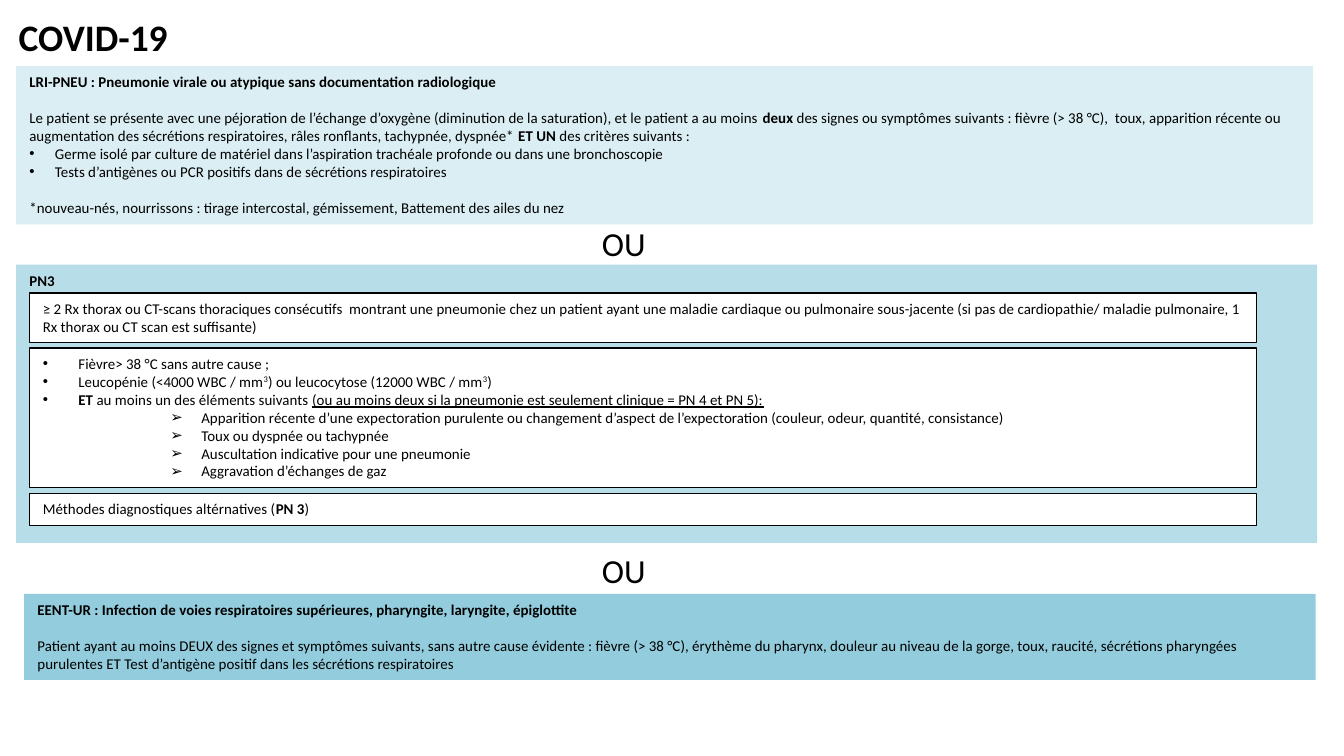
from lxml.etree import SubElement
from pptx import Presentation
from pptx.dml.color import RGBColor
from pptx.enum.shapes import MSO_SHAPE
from pptx.enum.text import MSO_ANCHOR, PP_ALIGN
from pptx.oxml.ns import qn
from pptx.util import Inches, Pt

BLACK = RGBColor(0x00, 0x00, 0x00)
WHITE = RGBColor(0xFF, 0xFF, 0xFF)
PALE_BLUE = RGBColor(0xDB, 0xEE, 0xF4)
LIGHT_BLUE = RGBColor(0xB7, 0xDE, 0xE8)
MID_BLUE = RGBColor(0x93, 0xCD, 0xDD)

BODY = 8
SECTION_GAP = Pt(9.75)  # one line of body text
BOLD = {"bold": True}
UNDERLINED = {"underline": True}
SUPERSCRIPT = {"baseline": 30000}

# Bullet styles: character, left margin, hanging indent
SIGN = ("•", 0.19, 0.19)
CRITERION = ("•", 0.24, 0.24)
ELEMENT = ("➢", 1.18, 0.23)


def add_bullet(paragraph, bullet):
    char, margin, hang = bullet
    properties = paragraph._p.get_or_add_pPr()
    properties.set("marL", str(Inches(margin)))
    properties.set("indent", str(-Inches(hang)))
    SubElement(properties, qn("a:buFont"), typeface="Arial")
    SubElement(properties, qn("a:buChar"), char=char)


def write_paragraph(frame, runs, first=False, size=BODY, bullet=None, gap=False):
    paragraph = frame.paragraphs[0] if first else frame.add_paragraph()
    paragraph.alignment = PP_ALIGN.LEFT
    if gap:
        paragraph.space_before = SECTION_GAP
    if bullet:
        add_bullet(paragraph, bullet)
    for text, style in runs:
        run = paragraph.add_run()
        run.text = text
        run.font.color.rgb = BLACK
        formats = {"name": "Calibri", "size": Pt(size), "bold": False, **style}
        baseline = formats.pop("baseline", None)
        for attribute, value in formats.items():
            setattr(run.font, attribute, value)
        if baseline:
            run._r.get_or_add_rPr().set("baseline", str(baseline))


def add_panel(slide, box, fill, paragraphs, outlined=False):
    """Filled rectangle; each paragraph is (runs, options)."""
    panel = slide.shapes.add_shape(MSO_SHAPE.RECTANGLE, *map(Inches, box))
    panel.shadow.inherit = False
    panel.fill.solid()
    panel.fill.fore_color.rgb = fill
    if outlined:
        panel.line.color.rgb = BLACK
        panel.line.width = Pt(0.75)
    else:
        panel.line.fill.background()
    frame = panel.text_frame
    frame.word_wrap = True
    frame.vertical_anchor = MSO_ANCHOR.TOP
    for index, (runs, options) in enumerate(paragraphs):
        write_paragraph(frame, runs, first=index == 0, **options)


def add_label(slide, box, text, size, style):
    label = slide.shapes.add_textbox(*map(Inches, box))
    label.text_frame.word_wrap = False
    write_paragraph(label.text_frame, [(text, style)], first=True, size=size)


def add_lri_pneu(slide, box):
    add_panel(slide, box, PALE_BLUE, [
        ([("LRI-PNEU : Pneumonie virale ou atypique sans documentation radiologique", BOLD)], {}),
        ([("Le patient se présente avec une péjoration de l’échange d’oxygène (diminution de la "
           "saturation), et le patient a au moins ", {}),
          ("deux ", BOLD),
          ("des signes ou symptômes suivants : fièvre (> 38 °C),  toux, apparition récente ou "
           "augmentation des sécrétions respiratoires, râles ronflants, tachypnée, dyspnée* ", {}),
          ("ET UN ", BOLD),
          ("des critères suivants :", {})], {"gap": True}),
        ([("Germe isolé par culture de matériel dans l’aspiration trachéale profonde ou dans une "
           "bronchoscopie", {})], {"bullet": SIGN}),
        ([("Tests d’antigènes ou PCR positifs dans de sécrétions respiratoires", {})],
         {"bullet": SIGN}),
        ([("*nouveau-nés, nourrissons : tirage intercostal, gémissement, Battement des ailes du nez",
           {})], {"gap": True}),
    ])


def add_pn3(slide, box):
    left, top, width, _ = box
    add_panel(slide, box, LIGHT_BLUE, [([("PN3", BOLD)], {})])

    imaging = [([("≥ 2 Rx thorax ou CT-scans thoraciques consécutifs  montrant une pneumonie chez un "
                  "patient ayant une maladie cardiaque ou pulmonaire sous-jacente (si pas de "
                  "cardiopathie/ maladie pulmonaire, 1 Rx thorax ou CT scan est suffisante)", {})], {})]
    criteria = [
        ([(" Fièvre> 38 °C sans autre cause ;", {})], {"bullet": CRITERION}),
        ([(" Leucopénie (<4000 WBC / mm", {}), ("3", SUPERSCRIPT),
          (") ou leucocytose (12000 WBC / mm", {}), ("3", SUPERSCRIPT), (")", {})],
         {"bullet": CRITERION}),
        ([(" ET", BOLD), (" au moins un des éléments suivants ", {}),
          ("(ou au moins deux si la pneumonie est seulement clinique = PN 4 et PN 5):", UNDERLINED)],
         {"bullet": CRITERION}),
    ]
    elements = (
        "Apparition récente d’une expectoration purulente ou changement d’aspect de "
        "l’expectoration (couleur, odeur, quantité, consistance)",
        "Toux ou dyspnée ou tachypnée",
        "Auscultation indicative pour une pneumonie",
        "Aggravation d’échanges de gaz",
    )
    criteria += [([(element, {})], {"bullet": ELEMENT}) for element in elements]
    methods = [([("Méthodes diagnostiques altérnatives (", {}), ("PN 3", BOLD), (")", {})], {})]

    # White boxes stacked with equal gaps
    card_top = top + 0.21
    for height, paragraphs in ((0.37, imaging), (1.04, criteria), (0.24, methods)):
        add_panel(slide, (left + 0.1, card_top, width - 0.55, height), WHITE, paragraphs,
                  outlined=True)
        card_top += height + 0.04


def add_eent_ur(slide, box):
    add_panel(slide, box, MID_BLUE, [
        ([("EENT-UR : Infection de voies respiratoires supérieures, pharyngite, laryngite, "
           "épiglottite", BOLD)], {}),
        ([("Patient ayant au moins DEUX des signes et symptômes suivants, sans autre cause évidente : "
           "fièvre (> 38 °C), érythème du pharynx, douleur au niveau de la gorge, toux, raucité, "
           "sécrétions pharyngées purulentes ET Test d’antigène positif dans les sécrétions "
           "respiratoires", {})], {"gap": True}),
    ])


def main():
    presentation = Presentation()
    # Widescreen, 16:9
    presentation.slide_width = Inches(10)
    presentation.slide_height = Inches(10 * 9 / 16)
    slide = presentation.slides.add_slide(presentation.slide_layouts[6])

    # Title
    add_label(slide, (0.04, 0.06, 1.33, 0.44), "COVID-19", 20, BOLD)

    # Three alternative definitions
    add_lri_pneu(slide, (0.12, 0.49, 9.65, 1.18))
    add_pn3(slide, (0.12, 1.97, 9.68, 2.07))
    add_eent_ur(slide, (0.18, 4.42, 9.61, 0.64))

    # "Or" between the definitions
    for top in (1.61, 4.04):
        add_label(slide, (4.38, top, 0.53, 0.4), "OU", 18, {})

    presentation.save("out.pptx")


if __name__ == "__main__":
    main()
